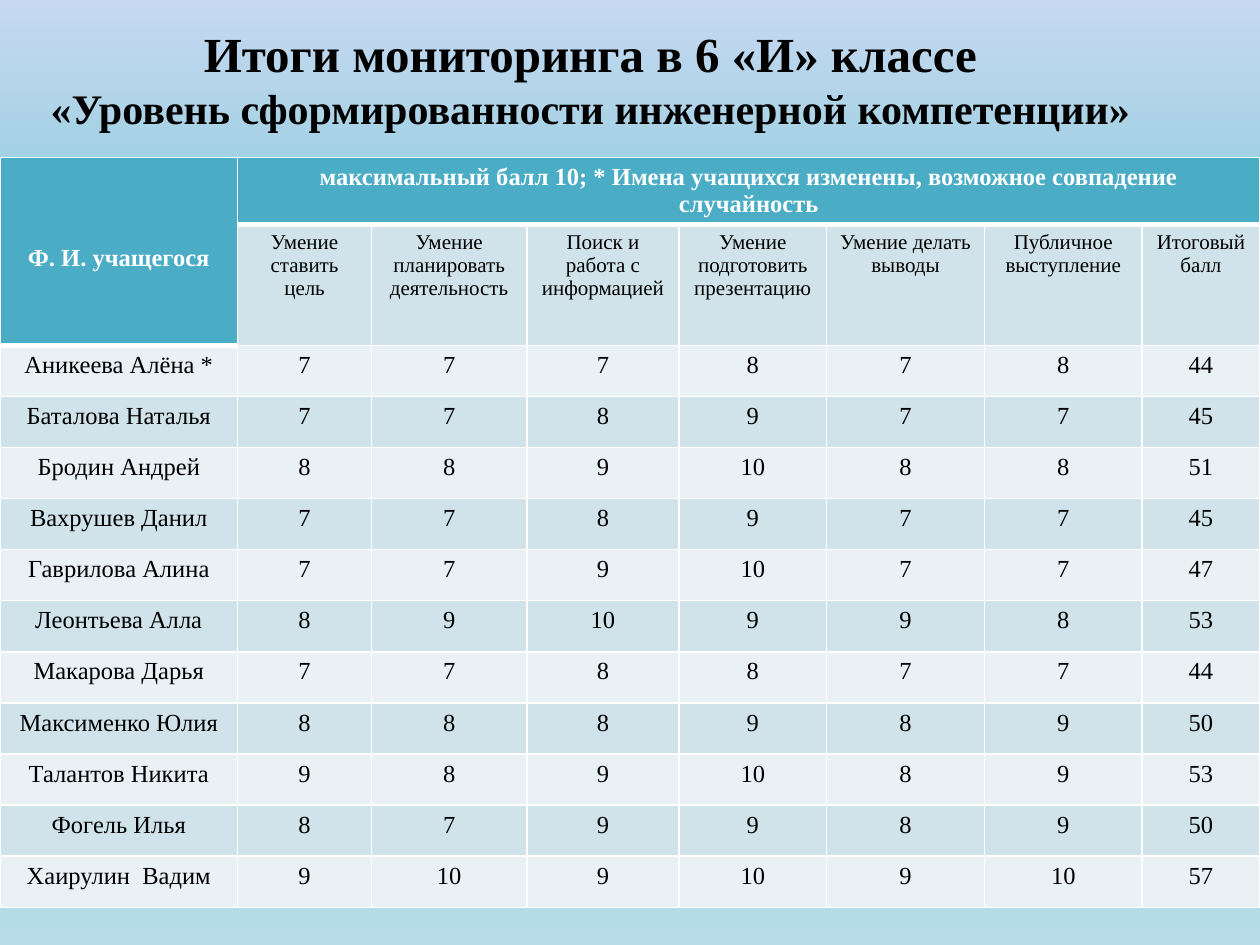
from lxml import etree
from pptx import Presentation
from pptx import util as u
from pptx.dml.color import RGBColor
from pptx.enum import text
from pptx.oxml.ns import qn

FONT = "Times New Roman"
COLOURS = {"black": "000000", "white": "FFFFFF", "header": "4BACC6",
           "dark band": "D0E3EA", "light band": "E9F1F5"}
BACKGROUND_STOPS = [(0, "C6D9F1"), (25, "93CDDD"), (75, "93CDDD"), (100, "B7DEE8")]
TITLE_LINES = [("Итоги мониторинга в 6 «И» классе", 28),
               ("«Уровень сформированности инженерной компетенции»", 24)]
NAME_HEADING = "Ф. И. учащегося"
SCORE_HEADING = ("максимальный балл 10; * Имена учащихся изменены, "
                 "возможное совпадение случайность")
SKILLS = ["Умение ставить цель", "Умение планировать деятельность",
          "Поиск и работа с информацией", "Умение подготовить презентацию",
          "Умение делать выводы", "Публичное выступление", "Итоговый балл"]
PUPILS = [
    ("Аникеева Алёна *", 7, 7, 7, 8, 7, 8, 44),
    ("Баталова Наталья", 7, 7, 8, 9, 7, 7, 45),
    ("Бродин Андрей", 8, 8, 9, 10, 8, 8, 51),
    ("Вахрушев Данил", 7, 7, 8, 9, 7, 7, 45),
    ("Гаврилова Алина", 7, 7, 9, 10, 7, 7, 47),
    ("Леонтьева Алла", 8, 9, 10, 9, 9, 8, 53),
    ("Макарова Дарья", 7, 7, 8, 8, 7, 7, 44),
    ("Максименко Юлия", 8, 8, 8, 9, 8, 9, 50),
    ("Талантов Никита", 9, 8, 9, 10, 8, 9, 53),
    ("Фогель Илья", 8, 7, 9, 9, 8, 9, 50),
    ("Хаирулин  Вадим", 9, 10, 9, 10, 9, 10, 57),
]
COLUMN_WIDTHS = [4.79, 2.7, 3.13, 3.07, 2.97, 3.19, 3.17, 2.38]
ROW_HEIGHTS = [1.35, 2.44] + [1.03] * len(PUPILS)


def add_run(paragraph, words, size, colour, bold=False):
    """Add one centred, formatted run to a paragraph."""
    paragraph.alignment = text.PP_ALIGN.CENTER
    run = paragraph.add_run()
    run.text = str(words)
    run.font.name = FONT
    run.font.size = u.Pt(size)
    run.font.bold = bold
    run.font.color.rgb = RGBColor.from_string(COLOURS[colour])


def set_background(slide):
    """Fill the slide with a vertical four-stop gradient."""
    fill = slide.background.fill
    fill.gradient()
    fill.gradient_angle = 270
    stops = slide.element.find(".//" + qn("a:gsLst"))
    for stop in list(stops):
        stops.remove(stop)
    for percent, colour in BACKGROUND_STOPS:
        stop = etree.SubElement(stops, qn("a:gs"), pos=str(percent * 1000))
        etree.SubElement(stop, qn("a:srgbClr"), val=colour)


def format_title(title):
    """Place the title and write its two lines."""
    title.left, title.top = u.Cm(-2.39), u.Cm(1.35)
    title.width, title.height = u.Cm(28.58), u.Cm(1.42)
    frame = title.text_frame
    frame.auto_size = text.MSO_AUTO_SIZE.NONE
    frame.vertical_anchor = text.MSO_ANCHOR.MIDDLE
    frame.margin_bottom = u.Cm(1.1)
    for index, (words, size) in enumerate(TITLE_LINES):
        paragraph = frame.add_paragraph() if index else frame.paragraphs[0]
        add_run(paragraph, words, size, "black", bold=True)


def is_header(row, column):
    """Tell whether a cell belongs to the coloured header."""
    return row == 0 or (row == 1 and column == 0)


def set_borders(cell, top, bottom):
    """Draw white cell borders with the given top and bottom weights."""
    properties = cell._tc.get_or_add_tcPr()
    sides = [("L", 1), ("R", 1), ("T", top), ("B", bottom)]
    for index, (side, weight) in enumerate(sides):
        line = etree.Element(qn(f"a:ln{side}"), w=str(u.Pt(weight)))
        fill = etree.SubElement(line, qn("a:solidFill"))
        etree.SubElement(fill, qn("a:srgbClr"), val=COLOURS["white"])
        properties.insert(index, line)


def format_cell(cell, row, column):
    """Fill and border a cell according to its place in the grid."""
    header = is_header(row, column)
    band = "dark band" if row % 2 else "light band"
    cell.fill.solid()
    cell.fill.fore_color.rgb = RGBColor.from_string(COLOURS["header" if header else band])
    below_header = not header and is_header(row - 1, column)
    set_borders(cell, 3 if below_header else 1, 3 if header else 1)


def add_results_table(slide):
    """Add the table of pupils and their scores."""
    rows = [(NAME_HEADING, SCORE_HEADING), (None, *SKILLS), *PUPILS]
    frame = slide.shapes.add_table(len(rows), len(COLUMN_WIDTHS), 0, u.Cm(3.17),
                                   u.Cm(sum(COLUMN_WIDTHS)), u.Cm(sum(ROW_HEIGHTS)))
    table = frame.table
    for column, width in zip(table.columns, COLUMN_WIDTHS):
        column.width = u.Cm(width)
    for row, height in zip(table.rows, ROW_HEIGHTS):
        row.height = u.Cm(height)
    table.cell(0, 0).merge(table.cell(1, 0))
    table.cell(0, 1).merge(table.cell(0, len(SKILLS)))
    for row in range(len(rows)):
        for column in range(len(COLUMN_WIDTHS)):
            format_cell(table.cell(row, column), row, column)
    for row, values in enumerate(rows):
        for column, value in enumerate(values):
            if value is None:
                continue
            header = is_header(row, column)
            size = 12 if row == 1 else 14
            paragraph = table.cell(row, column).text_frame.paragraphs[0]
            add_run(paragraph, value, size, "white" if header else "black", header)
    name_cell = table.cell(0, 0)
    name_cell.vertical_anchor = text.MSO_ANCHOR.MIDDLE
    name_cell.margin_top = u.Cm(0.4)


def main():
    """Build and save the presentation."""
    presentation = Presentation()
    presentation.slide_width, presentation.slide_height = u.Cm(25.4), u.Cm(19.05)
    slide = presentation.slides.add_slide(presentation.slide_layouts[5])
    set_background(slide)
    format_title(slide.shapes.title)
    add_results_table(slide)
    presentation.save("out.pptx")


if __name__ == "__main__":
    main()
